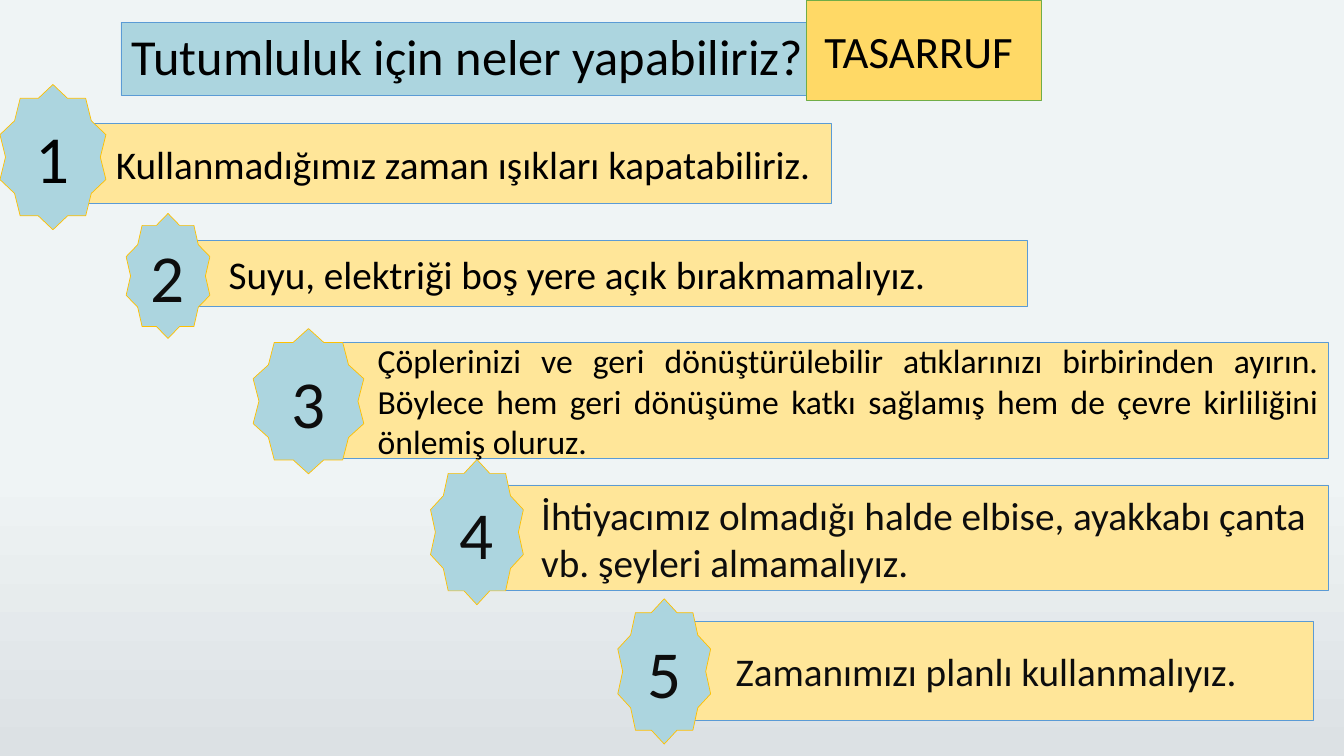
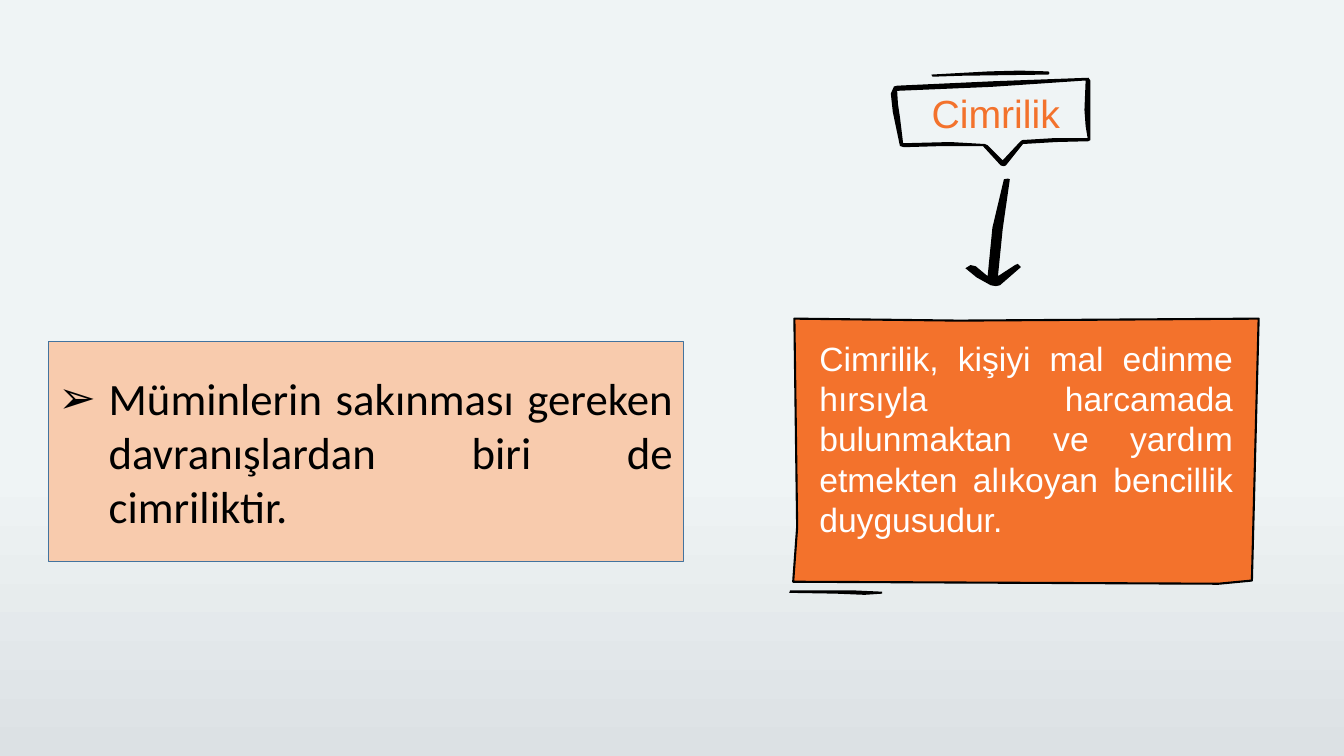
from lxml import etree
from pptx import Presentation
from pptx.dml.color import RGBColor
from pptx.enum.shapes import MSO_SHAPE
from pptx.enum.text import MSO_ANCHOR, PP_ALIGN
from pptx.oxml.ns import qn
from pptx.util import Cm, Pt

RECT, STAR = MSO_SHAPE.RECTANGLE, MSO_SHAPE.STAR_10_POINT
MIDDLE = MSO_ANCHOR.MIDDLE
LEFT, CENTER, JUST = PP_ALIGN.LEFT, PP_ALIGN.CENTER, PP_ALIGN.JUSTIFY

COLORS = {
    "sky": "EFF4F5", "mist": "DCE1E4", "aqua": "ACD5DF", "cream": "FFE699",
    "gold": "FFD966", "amber": "FFC000", "blue": "5B9BD5", "navy": "43739E",
    "green": "70AD47", "peach": "F8CBAD", "orange": "F3722C",
    "black": "000000", "ink": "0D0D0D", "white": "FFFFFF",
}

TITLE = "Tutumluluk için neler yapabiliriz?"
TAG = "TASARRUF "
TIPS = [
    ("Kullanmadığımız zaman ışıkları kapatabiliriz.",
     (1.4, 3.12, 19.56, 2.01), (0, 2.13, 2.67, 3.66),
     dict(indent=1.27), "black"),
    ("Suyu, elektriği boş yere açık bırakmamalıyız.",
     (4.62, 6.07, 21.26, 1.65), (3.18, 5.38, 2.11, 3.15),
     dict(indent=0.89), "ink"),
    ("Çöplerinizi ve geri dönüştürülebilir atıklarınızı birbirinden ayırın. "
     "Böylece hem geri dönüşüme katkı sağlamış hem de çevre kirliliğini "
     "önlemiş oluruz.",
     (8, 8.64, 25.48, 2.92), (6.38, 8.28, 2.79, 3.66),
     dict(indent=1.27, align=JUST, size=24), "ink"),
    ("İhtiyacımız olmadığı halde elbise, ayakkabı çanta vb. şeyleri "
     "almamalıyız.",
     (12.12, 12.22, 21.36, 2.67), (10.85, 11.58, 2.34, 3.66),
     dict(indent=1.27, color="ink"), "ink"),
    ("Zamanımızı planlı kullanmalıyız.",
     (16.61, 15.67, 16.48, 2.49), (15.57, 15.09, 2.34, 3.66),
     dict(align=CENTER, color="ink"), "ink"),
]

TERM = "Cimrilik"
MEANING = ("Cimrilik, kişiyi mal edinme hırsıyla harcamada bulunmaktan ve "
           "yardım etmekten alıkoyan bencillik duygusudur.")
POINT = "Müminlerin sakınması gereken davranışlardan biri de cimriliktir."

ARROW = [
    (25.4, 4.5), (25.45, 4.52), (25.27, 5.77), (25.15, 6.96), (25.58, 6.68),
    (25.65, 6.65), (25.73, 6.73), (25.2, 7.19), (25.1, 7.21), (24.97, 7.19),
    (24.61, 6.99), (24.33, 6.76), (24.46, 6.68), (24.59, 6.71),
    (24.89, 6.96), (25.01, 5.74), (25.3, 4.52),
]
OUTER = [
    (25.3, 4.19), (25.35, 4.17), (25.78, 3.63), (26.62, 3.58), (27.43, 3.56),
    (27.48, 3.53), (27.48, 3.18), (27.48, 2.03), (27.43, 1.96),
    (25.02, 2.05), (22.61, 2.16), (22.53, 2.18), (22.45, 2.36),
    (22.5, 2.82), (22.68, 3.68), (22.78, 3.71), (23.8, 3.68),
    (24.77, 3.68), (25.22, 4.17),
]
INNER = [
    (25.27, 4.04), (24.89, 3.66), (24.82, 3.63), (23.95, 3.58),
    (22.76, 3.61), (22.68, 2.95), (22.63, 2.62), (22.61, 2.29),
    (24.98, 2.19), (27.36, 2.03), (27.33, 2.77), (27.36, 3.18),
    (27.41, 3.48), (26.59, 3.48), (25.76, 3.53), (25.7, 3.58),
]
OVER = [
    (23.62, 1.93), (24.23, 1.91), (24.94, 1.9), (26.42, 1.88), (26.45, 1.84),
    (26.42, 1.8), (25.7, 1.78), (24.92, 1.8), (23.47, 1.88), (23.5, 1.93),
]
UNDER = [
    (20.37, 14.88), (19.91, 14.88), (19.89, 14.94), (21.06, 14.96),
    (21.79, 14.99), (22.23, 14.96), (22.23, 14.91), (21.56, 14.88),
]
CARD = [
    (31.72, 8.03), (24.16, 8.08), (20.02, 8.03), (20.09, 13.28),
    (19.99, 14.66), (30.71, 14.71), (31.55, 14.63),
]
STROKES = [[ARROW], [OUTER, INNER], [OVER], [UNDER]]


def rgb(name):
    return RGBColor.from_string(COLORS[name])


def paint(shape, fill, line=None, width=0.5):
    shape.shadow.inherit = False
    shape.fill.solid()
    shape.fill.fore_color.rgb = rgb(fill)
    if line:
        shape.line.color.rgb = rgb(line)
        shape.line.width = Pt(width)
    else:
        shape.line.fill.background()


def write(shape, text, size=28, color="black", align=LEFT, font="Calibri",
          indent=0, bullet=None, space=None):
    frame = shape.text_frame
    frame.word_wrap = True
    para = frame.paragraphs[0]
    para.text = text
    para.alignment = align
    para.line_spacing = space
    props = para._p.get_or_add_pPr()
    props.set("marL", str(Cm(indent)))
    props.set("indent", str(-Cm(indent) if bullet else 0))
    if bullet:
        etree.SubElement(props, qn("a:buFont")).set("typeface", "Arial")
        etree.SubElement(props, qn("a:buChar")).set("char", bullet)
    para.font.name = font
    para.font.size = Pt(size)
    para.font.color.rgb = rgb(color)


def block(slide, kind, box, fill, line, text, width=0.5, **style):
    shape = slide.shapes.add_shape(kind, *map(Cm, box))
    paint(shape, fill, line, width)
    shape.text_frame.vertical_anchor = MIDDLE
    write(shape, text, **style)


def label(slide, box, text, inset=None, **style):
    shape = slide.shapes.add_textbox(*map(Cm, box))
    frame = shape.text_frame
    if inset is not None:
        frame.margin_left = frame.margin_right = Cm(inset)
        frame.margin_top = frame.margin_bottom = Cm(inset)
    write(shape, text, font="Arial", **style)


def sketch(slide, rings, fill, line=None, width=0.5):
    rings = [[(Cm(x), Cm(y)) for x, y in ring] for ring in rings]
    pen = slide.shapes.build_freeform(*rings[0][0])
    pen.add_line_segments(rings[0][1:], close=True)
    for ring in rings[1:]:
        pen.move_to(*ring[0])
        pen.add_line_segments(ring[1:], close=True)
    paint(pen.convert_to_shape(), fill, line, width)


def backdrop(master):
    fill = master.background.fill
    fill.gradient()
    fill.gradient_angle = 270
    stops = zip(fill.gradient_stops, ((0.62, "sky"), (1, "mist")))
    for stop, (place, name) in stops:
        stop.position = place
        stop.color.rgb = rgb(name)


def saving(slide):
    block(slide, RECT, (3.05, 0.56, 17.48, 1.85), "aqua", "blue", TITLE,
          size=36, align=CENTER, space=0.9)
    block(slide, RECT, (20.32, 0, 5.92, 2.54), "gold", "green", TAG,
          size=32, align=CENTER)
    for rank, (text, bar, star, style, ink) in enumerate(TIPS, 1):
        block(slide, RECT, bar, "cream", "blue", text, **style)
        block(slide, STAR, star, "aqua", "amber", str(rank),
              size=48, align=CENTER, color=ink)


def stingy(slide):
    for rings in STROKES:
        sketch(slide, rings, "black")
    sketch(slide, [CARD], "orange", "black", 1.5)
    label(slide, (23.42, 2.26, 3.35, 1.19), TERM, inset=0,
          color="orange", align=CENTER)
    label(slide, (20.4, 8.38, 10.92, 5.38), MEANING,
          size=24, color="white", align=JUST)
    block(slide, RECT, (1.22, 8.61, 16, 5.54), "peach", "navy", POINT,
          width=1, size=32, align=JUST, indent=1.27, bullet="➢")


def main():
    deck = Presentation()
    deck.slide_width, deck.slide_height = Cm(33.87), Cm(19.05)
    backdrop(deck.slide_master)
    for draw in (saving, stingy):
        draw(deck.slides.add_slide(deck.slide_layouts[6]))
    deck.save("out.pptx")


if __name__ == "__main__":
    main()
